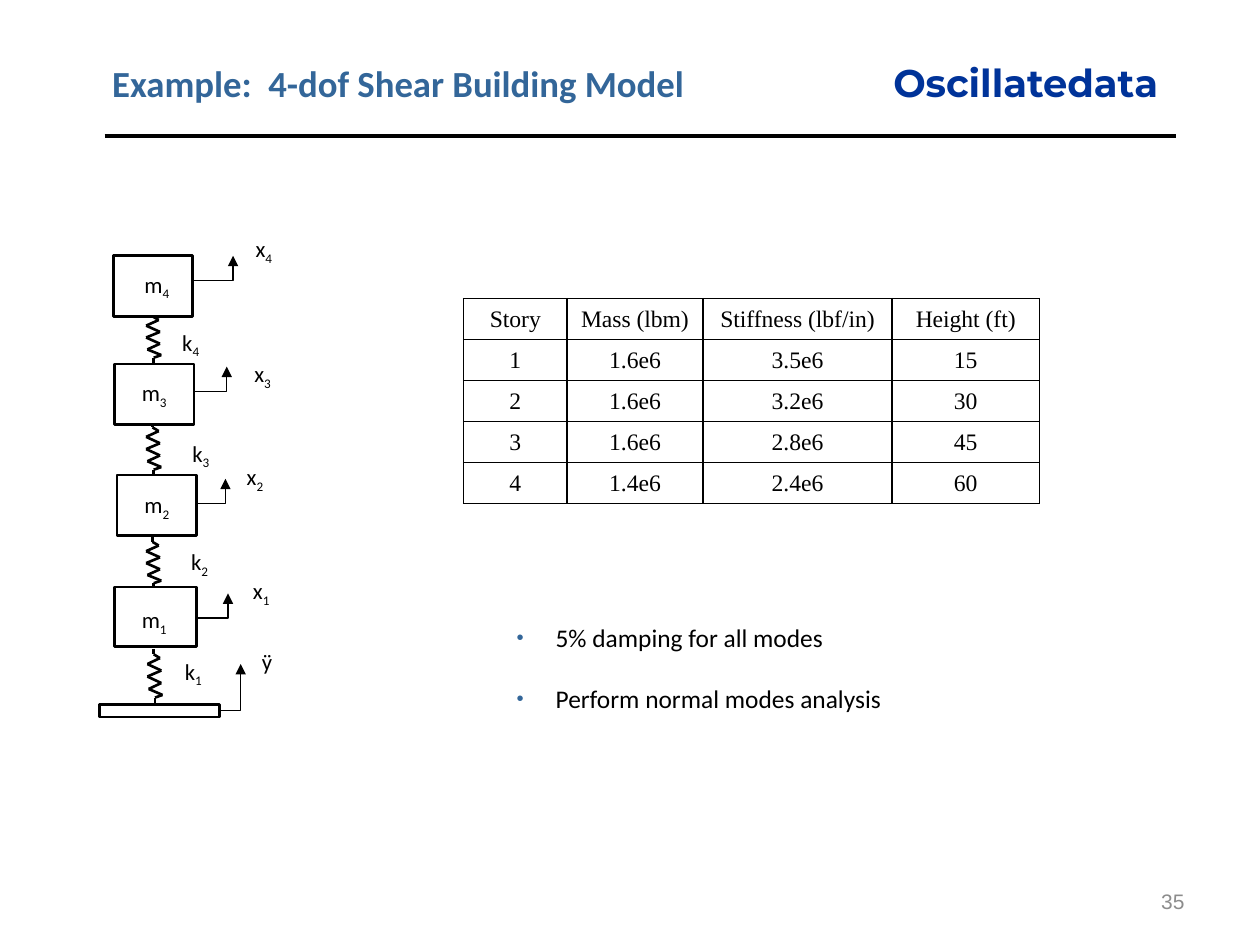
import pptx
import pptx.util
import pptx.dml.color
import pptx.enum.shapes
import pptx.enum.text
import pptx.oxml.ns
from itertools import pairwise
from lxml import etree

Inches = pptx.util.Inches
Pt = pptx.util.Pt
ALIGN = {
    "left": pptx.enum.text.PP_ALIGN.LEFT,
    "center": pptx.enum.text.PP_ALIGN.CENTER,
    "right": pptx.enum.text.PP_ALIGN.RIGHT,
}
RECTANGLE = pptx.enum.shapes.MSO_SHAPE.RECTANGLE
STRAIGHT = pptx.enum.shapes.MSO_CONNECTOR.STRAIGHT
ELBOW = pptx.enum.shapes.MSO_CONNECTOR.ELBOW
TOP = pptx.enum.text.MSO_ANCHOR.TOP
MIDDLE = pptx.enum.text.MSO_ANCHOR.MIDDLE

COLORS = {"ink": "000000", "paper": "FFFFFF", "title": "336699",
          "brand": "003399", "number": "8C8C8C"}

TITLE = "Example:  4-dof Shear Building Model"
BRAND = "Oscillatedata"
PAGE = "35"
TASKS = ["5% damping for all modes", "Perform normal modes analysis"]

STORIES = [
    ("Story", "Mass (lbm)", "Stiffness (lbf/in)", "Height (ft)"),
    ("1", "1.6e6", "3.5e6", "15"),
    ("2", "1.6e6", "3.2e6", "30"),
    ("3", "1.6e6", "2.8e6", "45"),
    ("4", "1.4e6", "2.4e6", "60"),
]
COLUMN_WIDTHS = (0.82, 1.08, 1.5, 1.17)

MASSES = [(0.91, 4.66, 0.65, 0.47), (0.93, 3.77, 0.63, 0.48),
          (0.91, 2.89, 0.63, 0.48), (0.9, 2.03, 0.63, 0.48)]
BASE = (0.79, 5.59, 0.95, 0.1)
SPRINGS = [(1.22, 5.15, 0.43), (1.21, 4.26, 0.41), (1.21, 3.35, 0.42), (1.21, 2.47, 0.41)]
ZIGZAG = [(0, 0), (0, 0.1), (0.05, 0.17), (-0.05, 0.28), (0.06, 0.4), (-0.05, 0.51),
          (0.06, 0.63), (-0.04, 0.74), (0.07, 0.85), (0.01, 0.9), (0.01, 1)]
ARROWS = [(1.48, 4.71, 0.33, 0.39, 0.5), (1.46, 3.8, 0.33, 0.39, 0.5),
          (1.47, 2.91, 0.33, 0.39, 0.5), (1.52, 2.03, 0.33, 0.39, 0.5),
          (1.56, 5.27, 0.35, 0.42, 0.12)]
MASS_LABELS = [(0.96, 4.74), (0.98, 3.83), (0.96, 2.94), (0.98, 2.08)]
STIFFNESS_LABELS = [(1.13, 5.15), (1.18, 4.28), (1.19, 3.42), (1.11, 2.54)]
MOTION_LABELS = [(1.91, 4.51), (1.86, 3.61), (1.92, 2.79), (1.93, 1.8)]
GROUND_LABEL = (1.98, 5.08)


def rgb(name):
    return pptx.dml.color.RGBColor.from_string(COLORS[name])


def write(paragraph, text, sub="", size=13, font="Calibri", color="ink",
          bold=False, align="left", line=None, before=0, after=0):
    paragraph.alignment = ALIGN[align]
    paragraph.space_before, paragraph.space_after = Pt(before), Pt(after)
    if line:
        paragraph.line_spacing = line
    for part in filter(None, (text, sub)):
        run = paragraph.add_run()
        run.text = part
        run.font.size, run.font.name, run.font.bold = Pt(size), font, bold
        run.font.color.rgb = rgb(color)
    if sub:
        run.font._element.set("baseline", "-25000")


def textbox(slide, box, text, **fmt):
    frame = slide.shapes.add_textbox(*map(Inches, box)).text_frame
    frame.word_wrap = True
    write(frame.paragraphs[0], text, **fmt)
    return frame


def place(placeholder, box):
    placeholder.left, placeholder.top, placeholder.width, placeholder.height = map(Inches, box)
    placeholder.text_frame.auto_size = pptx.enum.text.MSO_AUTO_SIZE.NONE
    return placeholder.text_frame


def child(parent, tag, **attributes):
    return etree.SubElement(parent, pptx.oxml.ns.qn(tag), attributes)


def connect(slide, kind, ends, width):
    connector = slide.shapes.add_connector(kind, *map(Inches, ends))
    connector.line.color.rgb = rgb("ink")
    connector.line.width = Pt(width)
    child(connector._element.spPr, "a:effectLst")
    return connector


def block(slide, box, outlined=True):
    rectangle = slide.shapes.add_shape(RECTANGLE, *map(Inches, box))
    rectangle.shadow.inherit = False
    rectangle.fill.solid()
    rectangle.fill.fore_color.rgb = rgb("paper")
    if outlined:
        rectangle.line.color.rgb = rgb("ink")
        rectangle.line.width = Pt(1.5)
    else:
        rectangle.line.fill.background()
    return rectangle


def plate(slide, box, text, **fmt):
    frame = block(slide, box, outlined=False).text_frame
    frame.vertical_anchor = TOP
    frame.word_wrap = True
    write(frame.paragraphs[0], text, **fmt)


def spring(slide, x, top, height):
    points = [(x + dx, top + share * height) for dx, share in ZIGZAG]
    for start, end in pairwise(points):
        connect(slide, STRAIGHT, start + end, 1.5)


def motion_arrow(slide, left, top, width, height, bend):
    x = left + (width - height) / 2
    y = top + (height - width) / 2
    arrow = connect(slide, ELBOW, (x, y, x + height, y + width), 0.75)
    properties = arrow._element.spPr
    properties.find(pptx.oxml.ns.qn("a:xfrm")).set("rot", "16200000")
    adjustments = properties.find(pptx.oxml.ns.qn("a:prstGeom")).get_or_add_avLst()
    child(adjustments, "a:gd", name="adj1", fmla=f"val {round(bend * 100000)}")
    child(arrow.line._get_or_add_ln(), "a:tailEnd", type="triangle")


def building(slide):
    label = {"line": 1.07, "after": 8}
    for story, (x, y) in enumerate(STIFFNESS_LABELS, 1):
        draw = textbox if story == 1 else plate
        draw(slide, (x, y, 0.57, 0.38), "k", sub=str(story), align="right", **label)
    for arrow in ARROWS:
        motion_arrow(slide, *arrow)
    for coil, mass in zip(SPRINGS, MASSES):
        spring(slide, *coil)
        block(slide, mass)
    block(slide, BASE)
    for story, (x, y) in enumerate(MASS_LABELS, 1):
        textbox(slide, (x, y, 0.53, 0.38), "m", sub=str(story), align="center", **label)
    for story, (x, y) in enumerate(MOTION_LABELS, 1):
        plate(slide, (x, y, 0.57, 0.38), "x", sub=str(story), **label)
    plate(slide, (*GROUND_LABEL, 0.57, 0.38), "ӱ", **label)


def story_table(slide):
    table = slide.shapes.add_table(len(STORIES), len(COLUMN_WIDTHS), Inches(3.68), Inches(2.37),
                                   Inches(sum(COLUMN_WIDTHS)), Inches(1.62)).table
    table.first_row = table.horz_banding = False
    for column, width in zip(table.columns, COLUMN_WIDTHS):
        column.width = Inches(width)
    for r, values in enumerate(STORIES):
        for c, value in enumerate(values):
            cell = table.cell(r, c)
            cell.vertical_anchor = MIDDLE
            write(cell.text_frame.paragraphs[0], value, size=13.5,
                  font="Times New Roman", align="center")
            for side in "LRTB":
                border = child(cell._tc.get_or_add_tcPr(), f"a:ln{side}", w=str(Pt(1)))
                child(child(border, "a:solidFill"), "a:srgbClr", val=COLORS["ink"])
            cell.fill.background()


def task_list(body):
    frame = place(body, (4, 4.89, 3.33, 0.83))
    for i, task in enumerate(TASKS):
        paragraph = frame.add_paragraph() if i else frame.paragraphs[0]
        properties = paragraph._p.get_or_add_pPr()
        properties.set("marL", str(Inches(0.31)))
        properties.set("indent", str(-Inches(0.31)))
        child(child(properties, "a:buClr"), "a:srgbClr", val=COLORS["title"])
        child(properties, "a:buSzPct", val="80000")
        child(properties, "a:buChar", char="•")
        write(paragraph, task, size=14.5, before=17.2 if i else 0)


def main():
    deck = pptx.Presentation()
    deck.slide_width, deck.slide_height = Inches(10), Inches(7.5)
    slide = deck.slides.add_slide(deck.slide_layouts[1])
    heading = place(slide.shapes.title, (0.79, 0.43, 5.8, 0.45))
    write(heading.paragraphs[0], TITLE, size=21, color="title", bold=True)
    textbox(slide, (6.42, 0.42, 2.87, 0.91), BRAND, size=22, font="Montserrat",
            color="brand", bold=True, align="right")
    connect(slide, STRAIGHT, (0.83, 1.08, 9.33, 1.08), 2.25)
    task_list(slide.placeholders[1])
    building(slide)
    story_table(slide)
    page = textbox(slide, (7.17, 6.95, 2.33, 0.4), PAGE, size=12, font="Arial",
                   color="number", align="right")
    page.vertical_anchor = MIDDLE
    deck.save("out.pptx")


if __name__ == "__main__":
    main()
